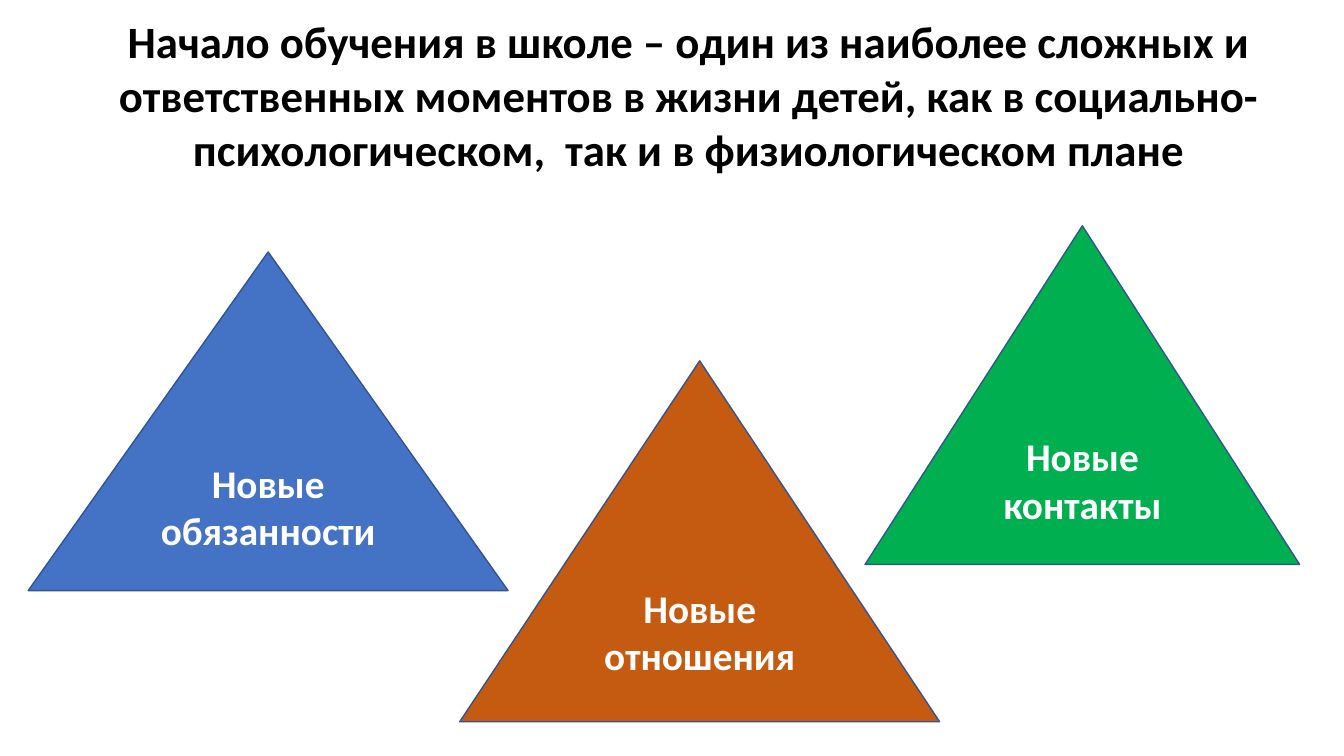
from dataclasses import dataclass

from pptx import Presentation
from pptx.dml.color import RGBColor
from pptx.enum.shapes import MSO_SHAPE
from pptx.enum.text import MSO_ANCHOR, MSO_AUTO_SIZE, PP_ALIGN
from pptx.slide import Slide
from pptx.text.text import TextFrame
from pptx.util import Inches, Pt

BLACK = RGBColor(0x00, 0x00, 0x00)
WHITE = RGBColor(0xFF, 0xFF, 0xFF)
BLUE = RGBColor(0x44, 0x72, 0xC4)
ORANGE = RGBColor(0xC5, 0x5A, 0x11)
GREEN = RGBColor(0x00, 0xB0, 0x50)
OUTLINE = RGBColor(0x32, 0x54, 0x91)

HEADING = (
    "Начало обучения в школе – один из наиболее сложных и ответственных "
    "моментов в жизни детей, как в социально-психологическом,  "
    "так и в физиологическом плане"
)


@dataclass(frozen=True)
class Change:
    """One novelty of school life, with its triangle in inches."""
    label: str
    left: float
    top: float
    width: float
    height: float
    color: RGBColor


CHANGES = [
    Change("Новые обязанности", 0.28, 2.5, 4.76, 3.36, BLUE),
    Change("Новые отношения", 4.56, 3.58, 4.76, 3.58, ORANGE),
    Change("Новые контакты", 8.58, 2.24, 4.31, 3.36, GREEN),
]


def write_text(frame: TextFrame, text: str, size: int, color: RGBColor,
               anchor: MSO_ANCHOR) -> None:
    frame_format = {
        "word_wrap": True,
        "auto_size": MSO_AUTO_SIZE.NONE,
        "vertical_anchor": anchor,
    }
    for attribute, value in frame_format.items():
        setattr(frame, attribute, value)
    paragraph = frame.paragraphs[0]
    paragraph.alignment = PP_ALIGN.CENTER
    run = paragraph.add_run()
    run.text = text
    font_format = {"name": "Calibri", "size": Pt(size), "bold": True}
    for attribute, value in font_format.items():
        setattr(run.font, attribute, value)
    run.font.color.rgb = color


def add_heading(slide: Slide) -> None:
    heading = slide.shapes.title
    position = {"left": 0.78, "top": 0.09, "width": 12.11, "height": 1.84}
    for attribute, value in position.items():
        setattr(heading, attribute, Inches(value))
    write_text(heading.text_frame, HEADING, 32, BLACK, MSO_ANCHOR.TOP)


def add_triangle(slide: Slide, change: Change) -> None:
    triangle = slide.shapes.add_shape(
        MSO_SHAPE.ISOSCELES_TRIANGLE,
        Inches(change.left), Inches(change.top),
        Inches(change.width), Inches(change.height),
    )
    triangle.shadow.inherit = False
    triangle.fill.solid()
    triangle.fill.fore_color.rgb = change.color
    triangle.line.color.rgb = OUTLINE
    triangle.line.width = Pt(1)
    write_text(triangle.text_frame, change.label, 28, WHITE, MSO_ANCHOR.MIDDLE)


def main() -> None:
    presentation = Presentation()
    presentation.slide_width = Inches(13.33)
    presentation.slide_height = Inches(7.5)
    title_only = presentation.slide_layouts.get_by_name("Title Only")
    slide = presentation.slides.add_slide(title_only)
    add_heading(slide)
    for change in CHANGES:
        add_triangle(slide, change)
    presentation.save("out.pptx")


if __name__ == "__main__":
    main()
